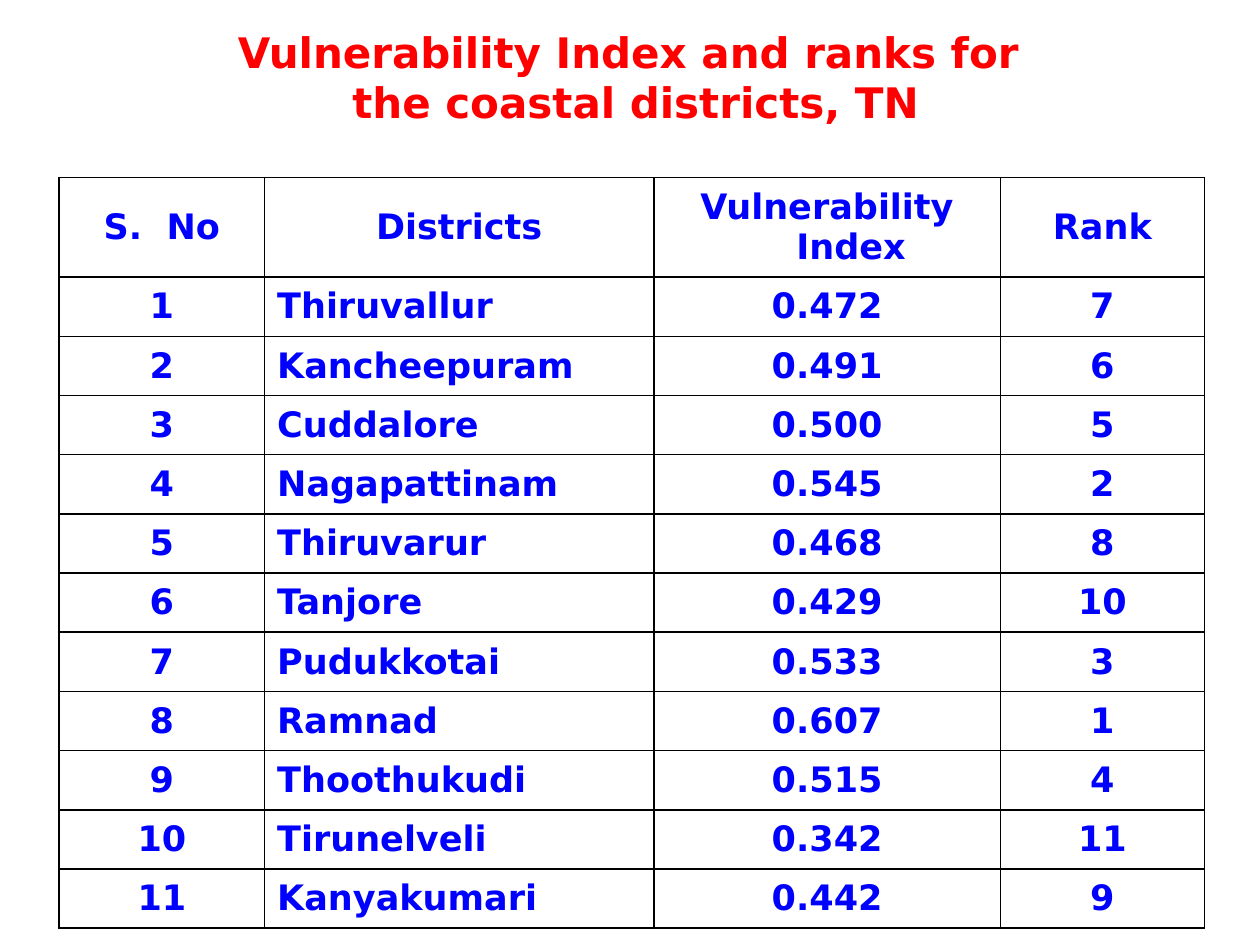
from lxml.etree import SubElement
from pptx import Presentation
from pptx.dml.color import RGBColor
from pptx.enum.text import MSO_ANCHOR, MSO_AUTO_SIZE, PP_ALIGN
from pptx.oxml.ns import qn
from pptx.util import Emu, Pt

EMU_PER_PX = 9144  # 100 px to the inch
FONT = "DejaVu Sans"
RED = RGBColor(0xFF, 0x00, 0x00)
BLUE = RGBColor(0x00, 0x00, 0xFF)
BLACK = RGBColor(0x00, 0x00, 0x00)

TITLE_LINES = ["Vulnerability Index and ranks for ", "the coastal districts, TN"]
HEADERS = ["S.  No", "Districts", "Vulnerability Index", "Rank"]
DISTRICTS = [
    ("Thiruvallur", "0.472", 7),
    ("Kancheepuram", "0.491", 6),
    ("Cuddalore", "0.500", 5),
    ("Nagapattinam", "0.545", 2),
    ("Thiruvarur", "0.468", 8),
    ("Tanjore", "0.429", 10),
    ("Pudukkotai", "0.533", 3),
    ("Ramnad", "0.607", 1),
    ("Thoothukudi", "0.515", 4),
    ("Tirunelveli", "0.342", 11),
    ("Kanyakumari", "0.442", 9),
]
COLUMN_WIDTHS = [163, 309, 275, 162]
HEADER_HEIGHT = 79
ROW_HEIGHT = 47
HANGING_INDENT = 38
DISTRICT_COLUMN = 1


def px(length):
    return Emu(length * EMU_PER_PX)


def format_paragraph(paragraph, size, color, alignment):
    paragraph.alignment = alignment
    font = paragraph.font
    font.name, font.size, font.bold = FONT, Pt(size), True
    font.color.rgb = color


def set_hanging_indent(paragraph, indent):
    properties = paragraph._p.get_or_add_pPr()
    properties.set("marL", str(px(indent)))
    properties.set("indent", str(px(-indent)))


def add_borders(cell, color, width):
    properties = cell._tc.get_or_add_tcPr()
    for side in ("lnL", "lnR", "lnT", "lnB"):
        line = SubElement(properties, qn(f"a:{side}"), w=str(Pt(width)))
        fill = SubElement(line, qn("a:solidFill"))
        SubElement(fill, qn("a:srgbClr"), val=str(color))


def fill_title(title):
    title.left, title.top, title.width, title.height = map(px, (17, 16, 975, 91))
    frame = title.text_frame
    frame.word_wrap = True
    frame.auto_size = MSO_AUTO_SIZE.NONE
    frame.vertical_anchor = MSO_ANCHOR.TOP
    paragraph = frame.paragraphs[0]
    format_paragraph(paragraph, 24, RED, PP_ALIGN.CENTER)
    first, second = TITLE_LINES
    paragraph.add_run().text = first
    paragraph.add_line_break()
    paragraph.add_run().text = second


def fill_cell(cell, text, alignment):
    cell.text = text
    cell.vertical_anchor = MSO_ANCHOR.MIDDLE
    paragraph = cell.text_frame.paragraphs[0]
    format_paragraph(paragraph, 20, BLUE, alignment)
    set_hanging_indent(paragraph, HANGING_INDENT)
    add_borders(cell, BLACK, 1)
    cell.fill.background()


def add_rank_table(slide):
    rows = [HEADERS] + [
        (number, *district) for number, district in enumerate(DISTRICTS, start=1)
    ]
    height = HEADER_HEIGHT + ROW_HEIGHT * len(DISTRICTS)
    table = slide.shapes.add_table(
        len(rows), len(HEADERS), px(47), px(141), px(sum(COLUMN_WIDTHS)), px(height)
    ).table
    table.first_row = table.horz_banding = False
    for column, width in zip(table.columns, COLUMN_WIDTHS):
        column.width = px(width)
    for row_index, values in enumerate(rows):
        table.rows[row_index].height = px(ROW_HEIGHT if row_index else HEADER_HEIGHT)
        for column_index, value in enumerate(values):
            is_district = row_index > 0 and column_index == DISTRICT_COLUMN
            alignment = PP_ALIGN.LEFT if is_district else PP_ALIGN.CENTER
            fill_cell(table.cell(row_index, column_index), str(value), alignment)


def main():
    presentation = Presentation()
    presentation.slide_width, presentation.slide_height = px(1000), px(750)
    title_only = presentation.slide_layouts[5]
    slide = presentation.slides.add_slide(title_only)
    fill_title(slide.shapes.title)
    add_rank_table(slide)
    presentation.save("out.pptx")


if __name__ == "__main__":
    main()
